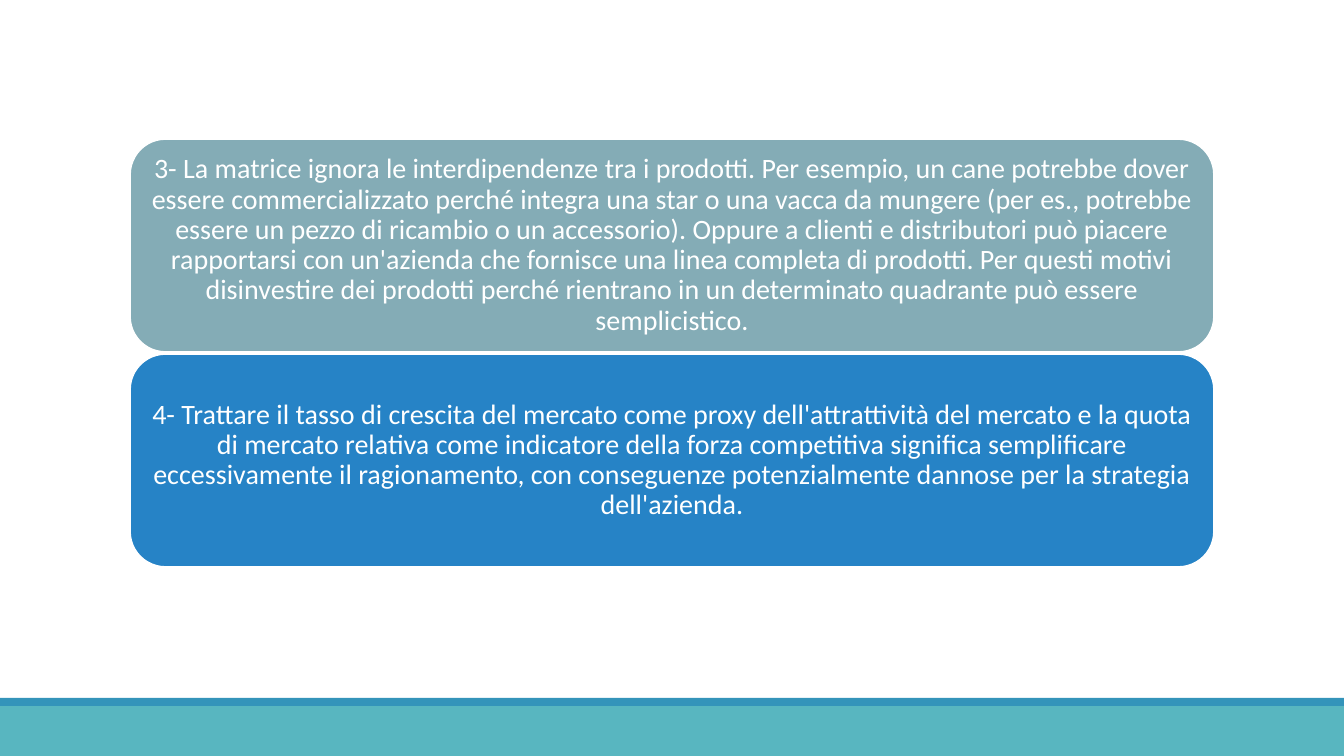
from pptx import Presentation
from pptx.dml.color import RGBColor
from pptx.enum.shapes import MSO_SHAPE
from pptx.enum.text import MSO_ANCHOR, PP_ALIGN
from pptx.util import Emu, Pt

WIDTH, HEIGHT = 1344, 756
WHITE = RGBColor(0xFF, 0xFF, 0xFF)
TEAL = RGBColor(0x58, 0xB6, 0xC0)
BLUE = RGBColor(0x34, 0x94, 0xBA)
GREY_TEAL = RGBColor(0x84, 0xAC, 0xB6)
DEEP_BLUE = RGBColor(0x26, 0x83, 0xC6)

LIMITS = [
    ("3- La matrice ignora le interdipendenze tra i prodotti. Per esempio, un cane "
     "potrebbe dover essere commercializzato perché integra una star o una vacca da "
     "mungere (per es., potrebbe essere un pezzo di ricambio o un accessorio). Oppure "
     "a clienti e distributori può piacere rapportarsi con un'azienda che fornisce una "
     "linea completa di prodotti. Per questi motivi disinvestire dei prodotti perché "
     "rientrano in un determinato quadrante può essere semplicistico.", GREY_TEAL),
    ("4- Trattare il tasso di crescita del mercato come proxy dell'attrattività del "
     "mercato e la quota di mercato relativa come indicatore della forza competitiva "
     "significa semplificare eccessivamente il ragionamento, con conseguenze "
     "potenzialmente dannose per la strategia dell'azienda.", DEEP_BLUE),
]


def px(n):
    return Emu(round(n * 914400 / 100.8))


def add_block(s, kind, x, y, w, h, color):
    sp = s.shapes.add_shape(kind, px(x), px(y), px(w), px(h))
    sp.shadow.inherit = False
    sp.fill.solid()
    sp.fill.fore_color.rgb = color
    sp.line.fill.background()
    return sp


def add_footer(s, x, y, w, h, stripe):
    add_block(s, MSO_SHAPE.RECTANGLE, x, y + stripe, w, h - stripe, TEAL)
    add_block(s, MSO_SHAPE.RECTANGLE, x, y, w, stripe, BLUE)


def add_card(s, x, y, w, h, text, color):
    sp = add_block(s, MSO_SHAPE.ROUNDED_RECTANGLE, x, y, w, h, color)
    sp.line.color.rgb = WHITE
    sp.line.width = Pt(1.25)
    tf = sp.text_frame
    tf.word_wrap = True
    tf.vertical_anchor = MSO_ANCHOR.MIDDLE
    tf.margin_left = tf.margin_right = tf.margin_top = tf.margin_bottom = px(8)
    tf.text = text
    p = tf.paragraphs[0]
    p.alignment = PP_ALIGN.CENTER
    p.line_spacing = 0.9
    font = p.runs[0].font
    font.name = "Calibri"
    font.size = Pt(20)
    font.color.rgb = WHITE


def add_cards(s, x, y, w, h, gap):
    card_h = (h - gap * (len(LIMITS) - 1)) // len(LIMITS)
    for i, (text, color) in enumerate(LIMITS):
        add_card(s, x, y + i * (card_h + gap), w, card_h, text, color)


def main():
    prs = Presentation()
    prs.slide_width, prs.slide_height = px(WIDTH), px(HEIGHT)
    s = prs.slides.add_slide(prs.slide_layouts[6])
    add_footer(s, 0, 698, WIDTH, HEIGHT - 698, 8)
    add_cards(s, 130, 139, 1084, 428, 2)
    prs.save("out.pptx")


if __name__ == "__main__":
    main()
